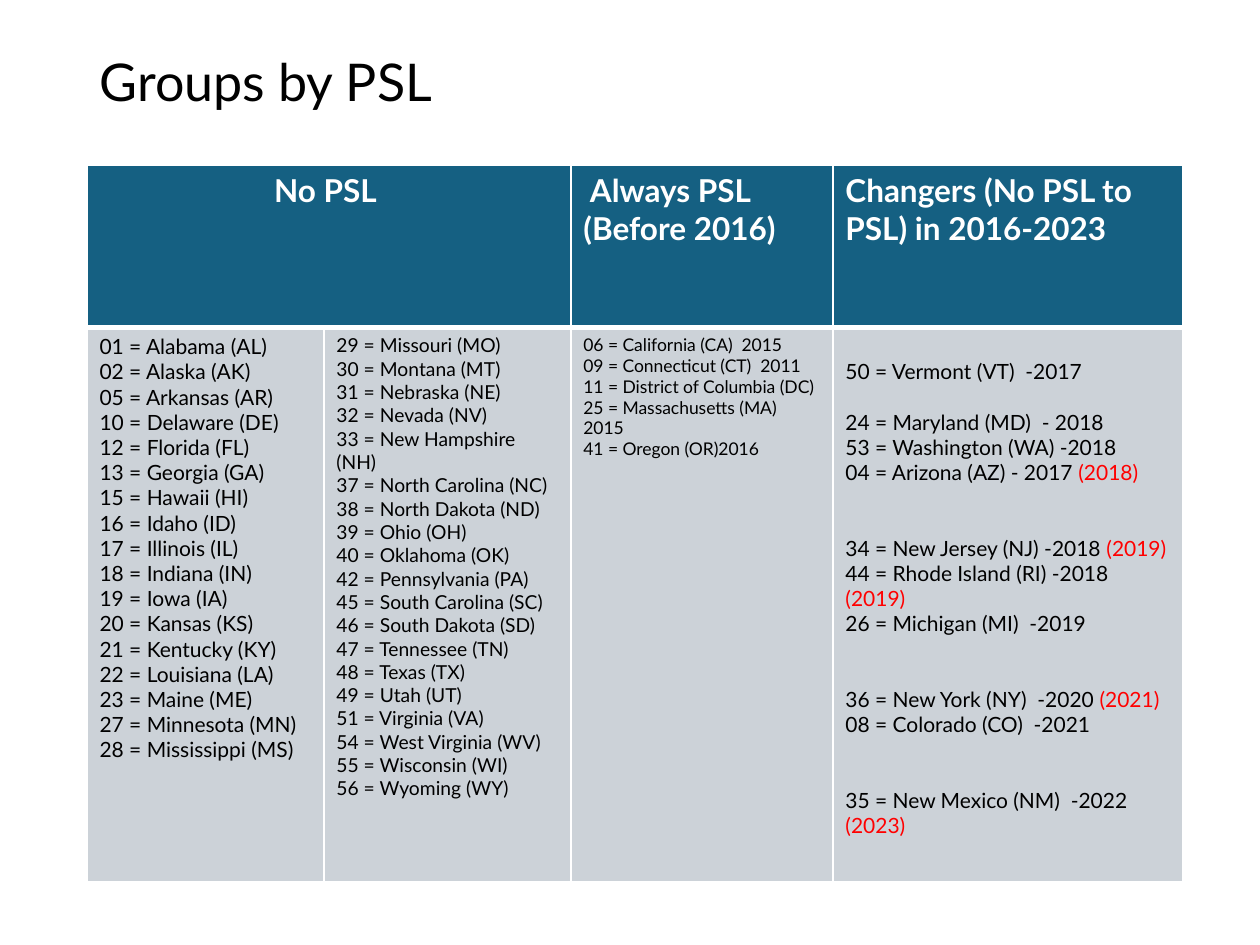
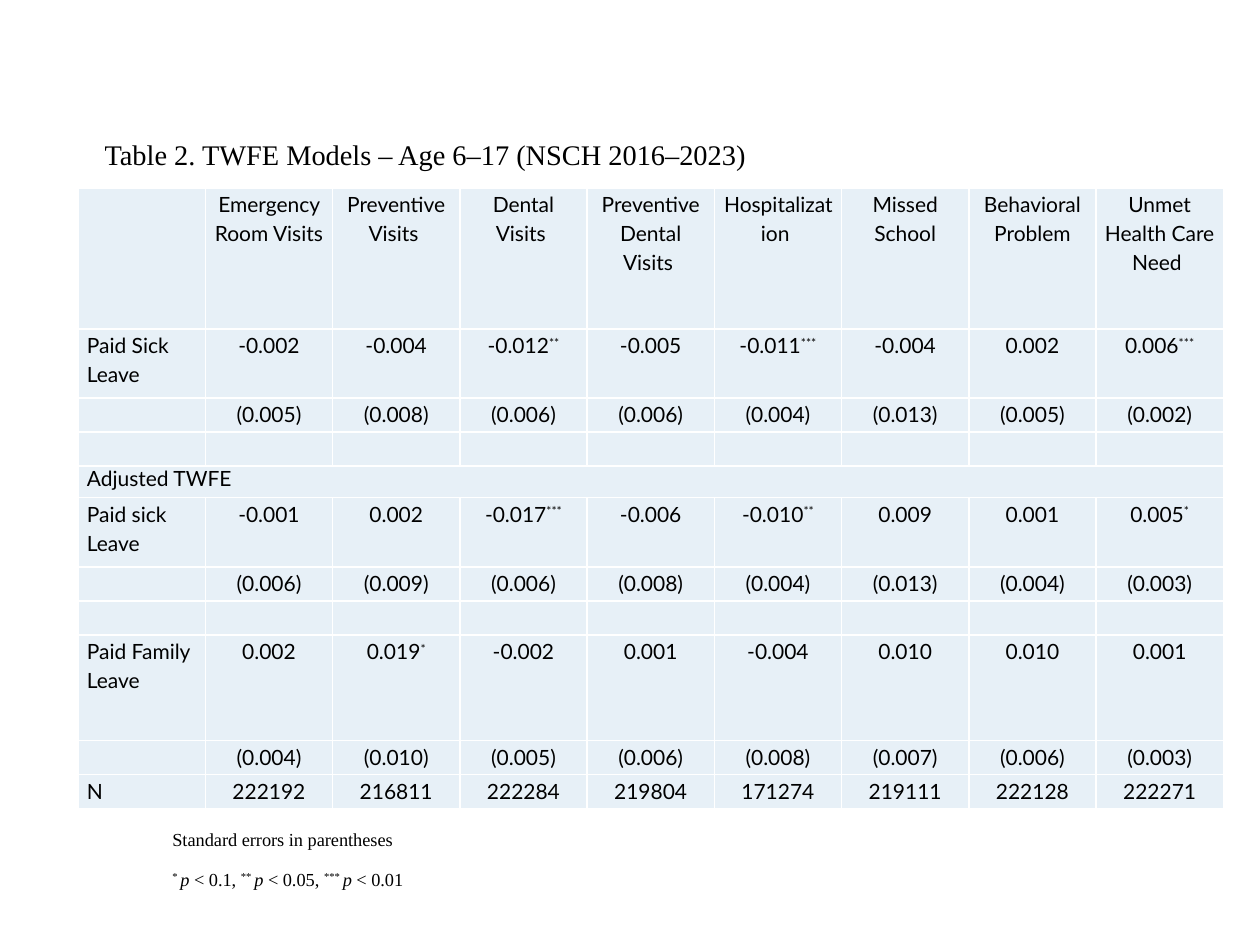
from dataclasses import dataclass

from lxml.etree import SubElement
from pptx import Presentation
from pptx.dml.color import RGBColor
from pptx.enum.text import MSO_ANCHOR, MSO_AUTO_SIZE, PP_ALIGN
from pptx.oxml.ns import qn
from pptx.util import Inches, Pt

COLORS = {
    "text": "000000",
    "white": "FFFFFF",
    "header": "156082",
    "body": "CCD2D8",
    "model": "E7F0F7",
    "effective": "FF0000",
}
SANS = "Lato"
SERIF = "Times New Roman"
LINE_HEIGHT = 14.4  # points, one line of 12 pt text


@dataclass(frozen=True)
class Box:
    left: float
    top: float
    width: float
    height: float

    def lengths(self) -> tuple:
        return tuple(Inches(n) for n in (self.left, self.top, self.width, self.height))


@dataclass(frozen=True)
class Changer:
    label: str
    effective: str = ""
    lines_before: int = 0


# Slide 1 content
HEADERS = {
    0: "No PSL ",
    2: " Always PSL (Before 2016)",
    3: "Changers (No PSL to PSL) in 2016-2023",
}
NO_PSL_FIRST = """01 = Alabama (AL)
02 = Alaska (AK)
05 = Arkansas (AR)
10 = Delaware (DE)
12 = Florida (FL)
13 = Georgia (GA)
15 = Hawaii (HI)
16 = Idaho (ID)
17 = Illinois (IL)
18 = Indiana (IN)
19 = Iowa (IA)
20 = Kansas (KS)
21 = Kentucky (KY)
22 = Louisiana (LA)
23 = Maine (ME)
27 = Minnesota (MN)
28 = Mississippi (MS)"""
NO_PSL_SECOND = """29 = Missouri (MO)
30 = Montana (MT)
31 = Nebraska (NE)
32 = Nevada (NV)
33 = New Hampshire (NH)
37 = North Carolina (NC)
38 = North Dakota (ND)
39 = Ohio (OH)
40 = Oklahoma (OK)
42 = Pennsylvania (PA)
45 = South Carolina (SC)
46 = South Dakota (SD)
47 = Tennessee (TN)
48 = Texas (TX)
49 = Utah (UT)
51 = Virginia (VA)
54 = West Virginia (WV)
55 = Wisconsin (WI)
56 = Wyoming (WY)"""
ALWAYS_PSL = """06 = California (CA)  2015
09 = Connecticut (CT)  2011
11 = District of Columbia (DC)
25 = Massachusetts (MA)  2015
41 = Oregon (OR)2016"""
STATE_LISTS = [(NO_PSL_FIRST, 12), (NO_PSL_SECOND, 11), (ALWAYS_PSL, 10)]
CHANGERS = [
    Changer("50 = Vermont (VT)  -2017"),
    Changer("24 = Maryland (MD)  - 2018", lines_before=1),
    Changer("53 = Washington (WA) -2018"),
    Changer("04 = Arizona (AZ) - 2017 ", "(2018)"),
    Changer("34 = New Jersey (NJ) -2018 ", "(2019)", 2),
    Changer("44 = Rhode Island (RI) -2018 ", "(2019)"),
    Changer("26 = Michigan (MI)  -2019"),
    Changer("36 = New York (NY)  -2020 ", "(2021)", 2),
    Changer("08 = Colorado (CO)  -2021"),
    Changer("35 = New Mexico (NM)  -2022 ", "(2023)", 2),
]

# Slide 2 content
OUTCOMES = ["", "Emergency Room Visits ", "Preventive Visits ", "Dental Visits ",
            "Preventive Dental Visits ", "Hospitalization ", "Missed School",
            "Behavioral Problem", "Unmet Health Care Need "]
SECTION = "Adjusted TWFE"
BLANK_ROW = [""] * len(OUTCOMES)
MODEL_ROWS = [
    (1.12, OUTCOMES),
    (0.55, ["Paid Sick Leave", "-0.002", "-0.004", "-0.012**", "-0.005",
            "-0.011***", "-0.004", "0.002", "0.006***"]),
    (0.27, ["", "(0.005)", "(0.008)", "(0.006)", "(0.006)",
            "(0.004)", "(0.013)", "(0.005)", "(0.002)"]),
    (0.27, BLANK_ROW),
    (0.25, [SECTION, *BLANK_ROW[1:]]),
    (0.55, ["Paid sick Leave", "-0.001", "0.002", "-0.017***", "-0.006",
            "-0.010**", "0.009", "0.001", "0.005*"]),
    (0.27, ["", "(0.006)", "(0.009)", "(0.006)", "(0.008)",
            "(0.004)", "(0.013)", "(0.004)", "(0.003)"]),
    (0.27, BLANK_ROW),
    (0.84, ["Paid Family Leave", "0.002", "0.019*", "-0.002", "0.001",
            "-0.004", "0.010", "0.010", "0.001"]),
    (0.27, ["", "(0.004)", "(0.010)", "(0.005)", "(0.006)",
            "(0.008)", "(0.007)", "(0.006)", "(0.003)"]),
    (0.27, ["N", "222192", "216811", "222284", "219804",
            "171274", "219111", "222128", "222271"]),
]
SIGNIFICANCE = [("* ", " < 0.1, "), ("** ", " < 0.05, "), ("*** ", " < 0.01")]


# Text helpers
def add_text(paragraph, text: str, *, size: float = 12, font: str = SANS,
             color: str = "text", bold: bool = False, italic: bool = False,
             superscript: bool = False) -> None:
    run = paragraph.add_run()
    run.text = text
    run.font.size = Pt(size)
    run.font.name = font
    run.font.bold = bold
    run.font.italic = italic
    run.font.color.rgb = RGBColor.from_string(COLORS[color])
    if superscript:
        run.font._element.set("baseline", "30000")


def next_paragraph(frame, index: int):
    return frame.add_paragraph() if index else frame.paragraphs[0]


def loosen(paragraph) -> None:
    paragraph.line_spacing = 1.15
    paragraph.space_after = Pt(8)


def set_title(slide, text: str, box: Box, size: float, font: str, anchor):
    title = slide.shapes.title
    title.left, title.top, title.width, title.height = box.lengths()
    frame = title.text_frame
    frame.auto_size = MSO_AUTO_SIZE.NONE
    frame.vertical_anchor = anchor
    paragraph = frame.paragraphs[0]
    paragraph.alignment = PP_ALIGN.LEFT
    add_text(paragraph, text, size=size, font=font)
    return paragraph


# Table helpers
def style_cell(cell, fill: str, **thick_sides: float) -> None:
    """Fill a cell and give it white borders, 1 pt unless a side is named."""
    properties = cell._tc.get_or_add_tcPr()
    for side in ("L", "R", "T", "B"):
        width = Pt(thick_sides.get(side, 1))
        line = SubElement(properties, qn(f"a:ln{side}"), w=str(width))
        solid = SubElement(line, qn("a:solidFill"))
        SubElement(solid, qn("a:srgbClr"), val=COLORS["white"])
    cell.fill.solid()
    cell.fill.fore_color.rgb = RGBColor.from_string(COLORS[fill])


def keep_row_low(cell) -> None:
    """Stop an empty cell from stretching its row."""
    SubElement(cell.text_frame.paragraphs[0]._p, qn("a:endParaRPr"), sz="1200")


def add_grid(slide, left: float, top: float, widths: list[float], heights: list[float]):
    box = Box(left, top, sum(widths), sum(heights))
    table = slide.shapes.add_table(len(heights), len(widths), *box.lengths()).table
    table.first_row = table.horz_banding = False
    for column, width in zip(table.columns, widths):
        column.width = Inches(width)
    for row, height in zip(table.rows, heights):
        row.height = Inches(height)
    return table


# Slides
def build_groups_slide(slide) -> None:
    title = set_title(slide, "Groups by PSL", Box(0.69, 0.4, 8.62, 0.54), 29.7, SANS,
                      MSO_ANCHOR.MIDDLE)
    title.line_spacing = 0.9
    table = add_grid(slide, 0.69, 1.31, [1.88, 1.96, 2.08, 2.78], [1.29, 4.4])
    for column in range(len(table.columns)):
        style_cell(table.cell(0, column), "header", B=3)
        style_cell(table.cell(1, column), "body", T=3)

    # Header row
    table.cell(0, 0).merge(table.cell(0, 1))
    keep_row_low(table.cell(0, 1))
    for column, header in HEADERS.items():
        paragraph = table.cell(0, column).text_frame.paragraphs[0]
        add_text(paragraph, header, size=18, color="white", bold=True)
    table.cell(0, 0).text_frame.paragraphs[0].alignment = PP_ALIGN.CENTER

    # State lists
    for column, (states, size) in enumerate(STATE_LISTS):
        frame = table.cell(1, column).text_frame
        for index, state in enumerate(states.splitlines()):
            add_text(next_paragraph(frame, index), state, size=size)

    # States that changed, grouped by year
    cell = table.cell(1, 3)
    cell.margin_top = Inches(0.25)
    for index, changer in enumerate(CHANGERS):
        paragraph = next_paragraph(cell.text_frame, index)
        paragraph.space_before = Pt(LINE_HEIGHT * changer.lines_before)
        add_text(paragraph, changer.label)
        if changer.effective:
            add_text(paragraph, changer.effective, color="effective")


def fill_model_cell(cell, text: str, centered: bool) -> None:
    style_cell(cell, "model")
    cell.margin_left = cell.margin_right = Inches(0.07)
    cell.margin_top = cell.margin_bottom = 0
    if not text:
        keep_row_low(cell)
        return
    paragraph = cell.text_frame.paragraphs[0]
    if text != SECTION:
        loosen(paragraph)
    if centered:
        paragraph.alignment = PP_ALIGN.CENTER
    value = text.rstrip("*")
    add_text(paragraph, value)
    if value != text:
        add_text(paragraph, text[len(value):], superscript=True)


def build_models_slide(slide) -> None:
    title = set_title(slide, "Table 2. TWFE Models – Age 6–17 (NSCH 2016–2023)",
                      Box(0.73, 1, 8.65, 0.82), 16.2, SERIF, MSO_ANCHOR.TOP)
    loosen(title)
    heights = [height for height, _ in MODEL_ROWS]
    table = add_grid(slide, 0.62, 1.49, [1.01] * len(OUTCOMES), heights)
    for row, (_, texts) in enumerate(MODEL_ROWS):
        for column, text in enumerate(texts):
            fill_model_cell(table.cell(row, column), text, centered=column > 0)
        if texts[0] == SECTION:
            table.cell(row, 0).merge(table.cell(row, len(texts) - 1))

    # Notes below the table
    frame = slide.shapes.add_textbox(*Box(1.27, 6.5, 4.84, 0.63).lengths()).text_frame
    frame.word_wrap = True
    note, legend = frame.paragraphs[0], frame.add_paragraph()
    loosen(note)
    loosen(legend)
    style = {"size": 10.5, "font": SERIF}
    add_text(note, "Standard errors in parentheses", **style)
    for stars, level in SIGNIFICANCE:
        add_text(legend, stars, superscript=True, **style)
        add_text(legend, "p", italic=True, **style)
        add_text(legend, level, **style)


def main() -> None:
    presentation = Presentation()
    presentation.slide_width, presentation.slide_height = Inches(10), Inches(7.5)
    title_only = presentation.slide_layouts[5]
    for build in (build_groups_slide, build_models_slide):
        build(presentation.slides.add_slide(title_only))
    presentation.save("out.pptx")


if __name__ == "__main__":
    main()
